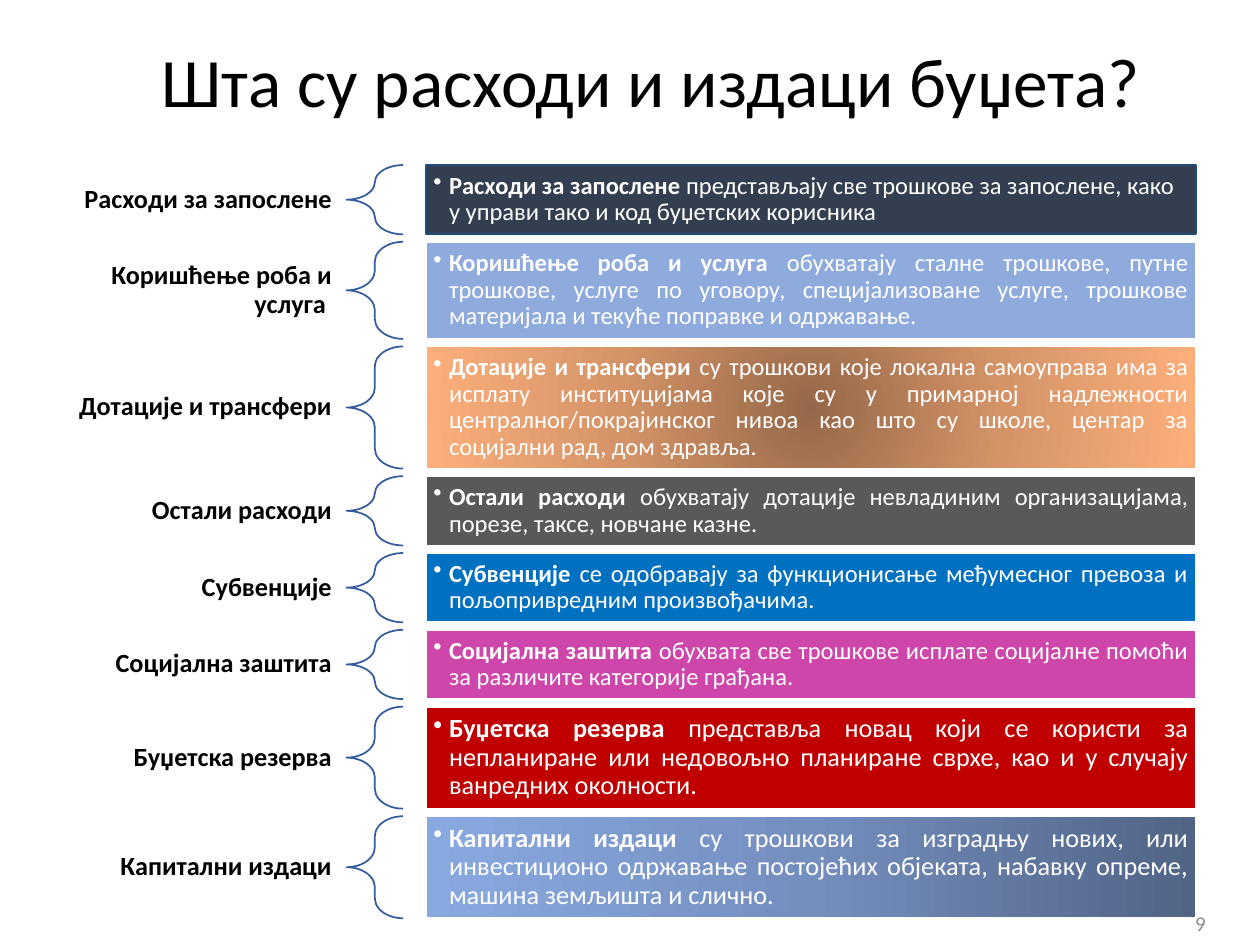
from dataclasses import dataclass

from lxml import etree
from pptx import Presentation
from pptx.dml.color import RGBColor
from pptx.enum.shapes import MSO_SHAPE
from pptx.enum.text import MSO_ANCHOR, PP_ALIGN
from pptx.oxml import parse_xml
from pptx.oxml.ns import nsdecls, qn
from pptx.util import Pt

LEFT, RIGHT, CENTER = PP_ALIGN.LEFT, PP_ALIGN.RIGHT, PP_ALIGN.CENTER
JUSTIFY = PP_ALIGN.JUSTIFY
MIDDLE = MSO_ANCHOR.MIDDLE
RECT, BRACE = MSO_SHAPE.RECTANGLE, MSO_SHAPE.LEFT_BRACE


@dataclass(frozen=True)
class Theme:
    font: str = "Calibri"
    text: str = "000000"
    inverse: str = "FFFFFF"
    muted: str = "8C8C8C"
    brace: str = "365B9D"
    first_border: str = "1F4E79"
    title_size: float = 39.6
    label_size: float = 15
    body_size: float = 14
    large_body_size: float = 15
    number_size: float = 12


THEME = Theme()
RADIAL = '<a:path path="circle"><a:fillToRect l="50000" t="50000" r="50000" b="50000"/></a:path>'
LINEAR = '<a:lin ang="10800000" scaled="0"/>'
GRANTS_FILL = (("966849", "D59468", "FDAF7B"), RADIAL)
CAPITAL_FILL = (("516486", "748EBE", "89A9E1"), LINEAR)

TOP, GAP = 94.3, 4.3
LABEL_X, LABEL_W = 36, 162
BRACE_X, BRACE_W = 198, 32.4
BOX_X, BOX_W = 243.4, 440

ROWS = [
    ("Расходи за запослене", "Расходи за запослене",
     " представљају све трошкове за запослене, како у управи тако и код буџетских корисника",
     39.6, "333F50", THEME.body_size),
    ("Коришћење роба и услуга ", "Коришћење роба и услуга",
     " обухватају сталне трошкове, путне трошкове, услуге по уговору, специјализоване услуге, "
     "трошкове материјала и текуће поправке и одржавање.",
     55.5, "8FAADC", THEME.body_size),
    ("Дотације и трансфери", "Дотације и трансфери",
     " су трошкови које локална самоуправа има за исплату институцијама које су у примарној "
     "надлежности централног/покрајинског нивоа као што су школе, центар за социјални рад, "
     "дом здравља.",
     69.8, GRANTS_FILL, THEME.body_size),
    ("Остали расходи", "Остали расходи",
     " обухватају дотације невладиним организацијама, порезе, таксе, новчане казне.",
     39.6, "595959", THEME.body_size),
    ("Субвенције", "Субвенције",
     " сe одобравају за функционисање међумесног превоза и пољопривредним произвођачима.",
     39.6, "0070C0", THEME.body_size),
    ("Социјална заштита", "Социјална заштита",
     " обухвата све трошкове исплате социјалне помоћи за различите категорије грађана.",
     39.6, "CE46AA", THEME.body_size),
    ("Буџетска резерва", "Буџетска резерва",
     " представља новац који се користи за непланиране или недовољно планиране сврхе, "
     "као и у случају ванредних околности.",
     58.3, "C00000", THEME.large_body_size),
    ("Капитални издаци", "Капитални издаци",
     " су трошкови за изградњу нових, или инвестиционо одржавање постојећих објеката, "
     "набавку опреме, машина земљишта и слично.",
     58.3, CAPITAL_FILL, THEME.large_body_size),
]


def write(shape, runs, *, size, color, align, insets=(7.2, 3.6), spacing=None, bullet=False):
    tf = shape.text_frame
    tf.word_wrap = True
    tf.vertical_anchor = MIDDLE
    tf.margin_left = tf.margin_right = Pt(insets[0])
    tf.margin_top = tf.margin_bottom = Pt(insets[1])
    p = tf.paragraphs[0]
    p.alignment = align
    p.line_spacing = spacing
    if bullet:
        pPr = p._p.get_or_add_pPr()
        pPr.set("marL", str(Pt(9)))
        pPr.set("indent", str(Pt(-9)))
        etree.SubElement(pPr, qn("a:buChar")).set("char", "•")
    for text, bold in runs:
        r = p.add_run()
        r.text = text
        r.font.name = THEME.font
        r.font.size = Pt(size)
        r.font.bold = bold
        r.font.color.rgb = RGBColor.from_string(color)


def add_text(s, x, y, w, h, runs, **style):
    write(s.shapes.add_textbox(Pt(x), Pt(y), Pt(w), Pt(h)), runs, **style)


def add_outlined(s, kind, x, y, w, h, line):
    sp = s.shapes.add_shape(kind, Pt(x), Pt(y), Pt(w), Pt(h))
    sp.shadow.inherit = False
    sp.line.color.rgb = RGBColor.from_string(line)
    sp.line.width = Pt(1)
    return sp


def add_brace(s, y, h):
    sp = add_outlined(s, BRACE, BRACE_X, y, BRACE_W, h, THEME.brace)
    sp.fill.background()
    sp.adjustments[0] = 0.35


def set_gradient(sp, colors, direction):
    stops = "".join(
        f'<a:gs pos="{i * 50000}"><a:srgbClr val="{c}"/></a:gs>' for i, c in enumerate(colors)
    )
    sp.fill.gradient()
    spPr = sp._element.spPr
    grad = parse_xml(
        f'<a:gradFill {nsdecls("a")} rotWithShape="1"><a:gsLst>{stops}</a:gsLst>{direction}</a:gradFill>'
    )
    spPr.replace(spPr.find(qn("a:gradFill")), grad)


def add_box(s, y, h, fill, line, runs, size, align):
    sp = add_outlined(s, RECT, BOX_X, y, BOX_W, h, line)
    if isinstance(fill, str):
        sp.fill.solid()
        sp.fill.fore_color.rgb = RGBColor.from_string(fill)
    else:
        set_gradient(sp, *fill)
    write(sp, runs, size=size, color=THEME.inverse, align=align,
          insets=(4.2, 4.2), spacing=0.9, bullet=True)


def add_rows(s):
    y = TOP
    for i, (label, term, definition, h, fill, size) in enumerate(ROWS):
        add_text(s, LABEL_X, y, LABEL_W, h, [(label, True)], size=THEME.label_size,
                 color=THEME.text, align=RIGHT, insets=(8.4, 3), spacing=0.9)
        add_brace(s, y, h)
        line, align = (THEME.inverse, JUSTIFY) if i else (THEME.first_border, LEFT)
        add_box(s, y, h, fill, line, [(term, True), (definition, False)], size, align)
        y += h + GAP


def add_title(s, text):
    sp = s.shapes.title
    sp.left, sp.top, sp.width, sp.height = Pt(48), Pt(21), Pt(648), Pt(49)
    write(sp, [(text, False)], size=THEME.title_size, color=THEME.text, align=CENTER)


def main():
    prs = Presentation()
    prs.slide_width, prs.slide_height = Pt(720), Pt(540)
    s = prs.slides.add_slide(prs.slide_layouts[5])
    add_title(s, "Шта су расходи и издаци буџета?")
    add_rows(s)
    add_text(s, 528, 513, 168, 28.8, [("9", False)], size=THEME.number_size,
             color=THEME.muted, align=RIGHT)
    prs.save("out.pptx")


if __name__ == "__main__":
    main()
